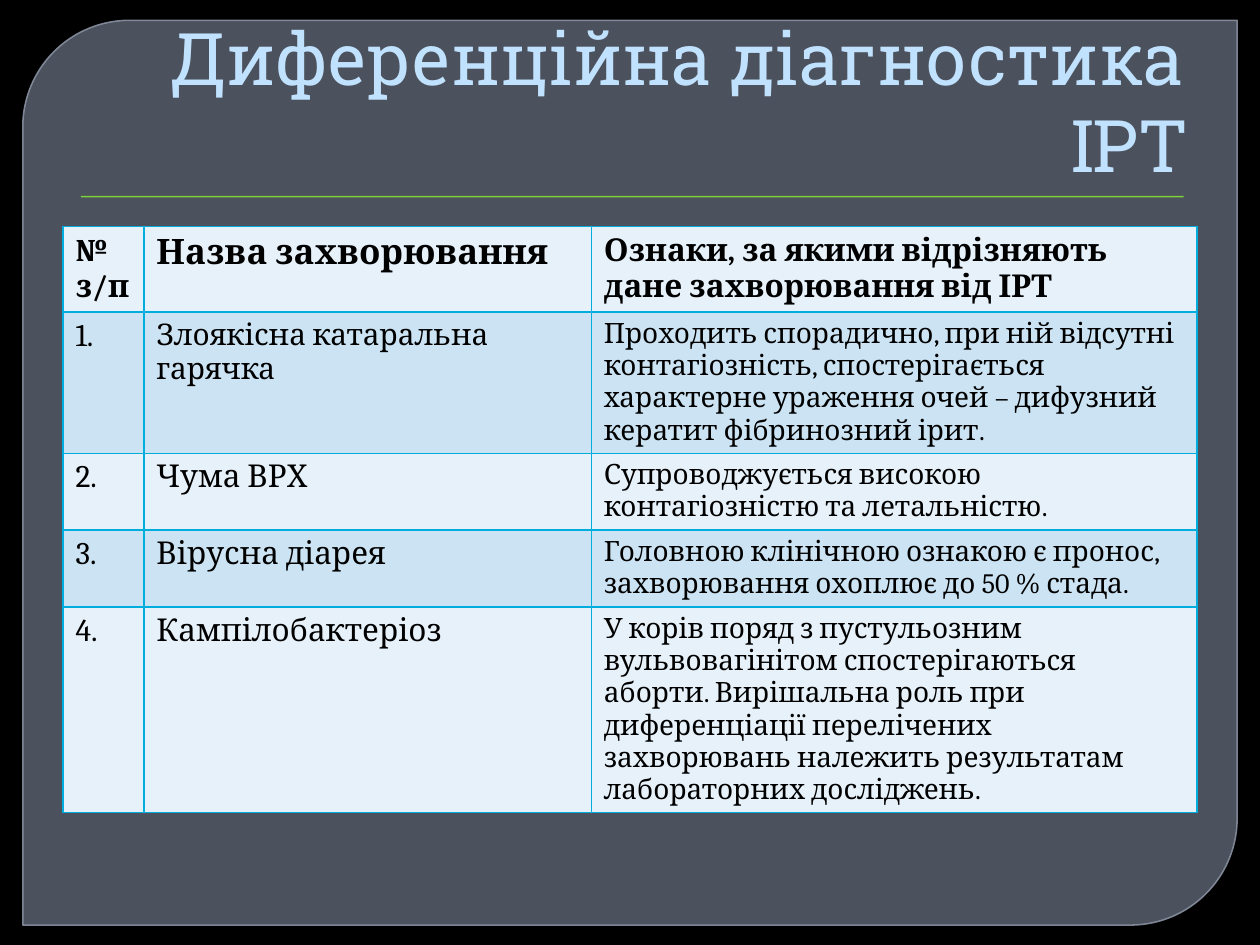
from lxml.etree import SubElement
from pptx import Presentation
from pptx.dml.color import RGBColor
from pptx.enum.shapes import MSO_SHAPE
from pptx.enum.text import MSO_ANCHOR, MSO_AUTO_SIZE, PP_ALIGN
from pptx.oxml.ns import qn
from pptx.util import Cm, Pt

TITLE = "Диференційна діагностика ІРТ"
HEADER = ("№\nз/п", "Назва захворювання", "Ознаки, за якими відрізняють дане захворювання від ІРТ")
DISEASES = [
    ("Злоякісна катаральна гарячка",
     "Проходить спорадично, при ній відсутні контагіозність, спостерігається характерне "
     "ураження очей – дифузний кератит фібринозний ірит."),
    ("Чума ВРХ", "Супроводжується високою контагіозністю та летальністю."),
    ("Вірусна діарея", "Головною клінічною ознакою є пронос, захворювання охоплює до 50 % стада."),
    ("Кампілобактеріоз",
     "У корів поряд з пустульозним вульвовагінітом спостерігаються аборти. Вирішальна роль "
     "при диференціації перелічених захворювань належить результатам лабораторних досліджень."),
]
COLORS = {
    "background": "000000", "panel": "767F8F", "panel_line": "8B94A4", "rule": "7FD13B",
    "title": "C1E2FF", "text": "000000", "border": "00ADDC", "light": "E7F1F9", "band": "CBE3F2",
}
COLUMN_WIDTHS = (1.63, 9.02, 12.21)
HEADER_SIZES = (18, 20, 18)
BODY_SIZES = (18, 18, 16)
FIRST_ROW_SIZES = (18, 17, 16)


def paint(fill, name):
    fill.solid()
    fill.fore_color.rgb = RGBColor.from_string(COLORS[name])


def set_alpha(fill_format_parent, percent):
    color = next(fill_format_parent.iter(qn("a:srgbClr")))
    SubElement(color, qn("a:alpha"), val=str(percent * 1000))


def add_run(paragraph, text, font, size, color, bold=False):
    run = paragraph.add_run()
    run.text = text
    run.font.name = font
    run.font.size = Pt(size)
    run.font.bold = bold
    run.font.color.rgb = RGBColor.from_string(COLORS[color])


def add_borders(cell):
    properties = cell._tc.get_or_add_tcPr()
    for position, side in enumerate(("a:lnL", "a:lnR", "a:lnT", "a:lnB")):
        line = properties.makeelement(qn(side), {"w": str(Pt(1))})
        properties.insert(position, line)
        SubElement(SubElement(line, qn("a:solidFill")), qn("a:srgbClr"), val=COLORS["border"])


def add_decoration(slide):
    panel = slide.shapes.add_shape(
        MSO_SHAPE.ROUND_2_DIAG_RECTANGLE, Cm(0.46), Cm(0.41), Cm(24.48), Cm(18.24))
    panel.adjustments[0] = 0.118
    panel.adjustments[1] = 0
    panel.shadow.inherit = False
    paint(panel.fill, "panel")
    set_alpha(panel.fill._xPr.find(qn("a:solidFill")), 65)
    paint(panel.line.fill, "panel_line")
    panel.line.width = Pt(0.87)
    set_alpha(panel.line._ln, 88)

    rule = slide.shapes.add_shape(MSO_SHAPE.RECTANGLE, Cm(1.63), Cm(3.95), Cm(22.23), Cm(0.03))
    rule.shadow.inherit = False
    paint(rule.fill, "rule")
    rule.line.fill.background()


def format_title(slide):
    title = slide.shapes.title
    slide.shapes._spTree.append(title._element)
    title.left, title.top, title.width, title.height = Cm(1.27), Cm(0.71), Cm(22.86), Cm(3.18)
    frame = title.text_frame
    frame.word_wrap = True
    frame.auto_size = MSO_AUTO_SIZE.NONE
    frame.vertical_anchor = MSO_ANCHOR.BOTTOM
    paragraph = frame.paragraphs[0]
    paragraph.alignment = PP_ALIGN.RIGHT
    paragraph._p.get_or_add_pPr().set("marL", str(Cm(0.15)))
    add_run(paragraph, TITLE, "Roboto Slab", 41.4, "title")


def add_disease_table(slide):
    rows = [HEADER] + [(f"{number}.", *disease) for number, disease in enumerate(DISEASES, 1)]
    frame = slide.shapes.add_table(
        len(rows), len(HEADER), Cm(1.27), Cm(4.57), Cm(22.86), Cm(11.61))
    table = frame.table
    for column, width in zip(table.columns, COLUMN_WIDTHS):
        column.width = Cm(width)
    sizes = [HEADER_SIZES, FIRST_ROW_SIZES] + [BODY_SIZES] * (len(rows) - 2)
    for row_index, texts in enumerate(rows):
        table.rows[row_index].height = Cm(1.03)
        for column_index, text in enumerate(texts):
            cell = table.cell(row_index, column_index)
            paint(cell.fill, "band" if row_index % 2 else "light")
            add_borders(cell)
            for line_index, line in enumerate(text.split("\n")):
                text_frame = cell.text_frame
                paragraph = text_frame.add_paragraph() if line_index else text_frame.paragraphs[0]
                add_run(paragraph, line, "Cambria", sizes[row_index][column_index],
                        "text", row_index == 0)
    frame.height = Cm(11.61)


def main():
    presentation = Presentation()
    presentation.slide_width, presentation.slide_height = Cm(25.4), Cm(19.05)
    slide = presentation.slides.add_slide(presentation.slide_layouts[5])
    paint(slide.background.fill, "background")
    add_decoration(slide)
    format_title(slide)
    add_disease_table(slide)
    presentation.save("out.pptx")


if __name__ == "__main__":
    main()
